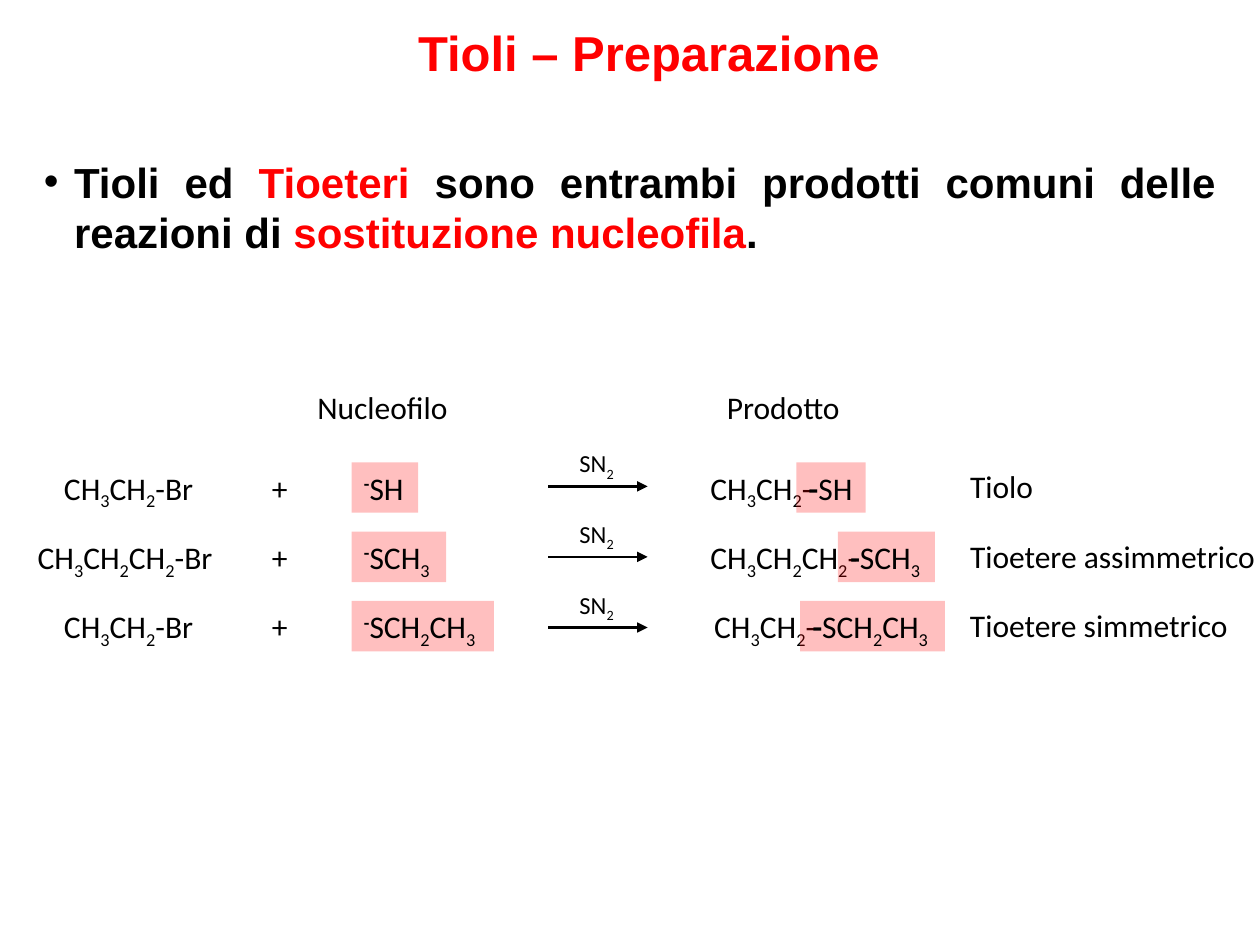
import itertools

import pptx
import pptx.dml.color
import pptx.enum.shapes
import pptx.enum.text
import pptx.oxml
import pptx.oxml.ns
import pptx.util
from pptx.util import Inches

RED = pptx.dml.color.RGBColor(0xFF, 0x00, 0x00)
BLACK = pptx.dml.color.RGBColor(0x00, 0x00, 0x00)
WHITE = pptx.dml.color.RGBColor(0xFF, 0xFF, 0xFF)

ALIGN = pptx.enum.text.PP_ALIGN
SUBSCRIPT, SUPERSCRIPT = -25000, 30000
LINE_HEIGHT = 0.4
ROW_PITCH = 0.55
ARROW_PITCH = 0.56

# Substrate, nucleophile, product stem, stem left, group, group left, group width, class
REACTIONS = [
    ("CH3CH2-Br", 0.41, 1.26, "SH", 0.53,
     "CH3CH2-", 5.54, 1.04, 6.32, 0.55, "Tiolo", 0.71),
    ("CH3CH2CH2-Br", 0.2, 1.68, "SCH3", 0.75,
     "CH3CH2CH2-", 5.54, 1.42, 6.65, 0.77, "Tioetere assimmetrico", 2.49),
    ("CH3CH2-Br", 0.41, 1.26, "SCH2CH3", 1.13,
     "CH3CH2-", 5.57, 1.04, 6.35, 1.15, "Tioetere simmetrico", 2.27),
]


def add_element(parent, tag, **attributes):
    element = pptx.oxml.parse_xml(f"<a:{tag} {pptx.oxml.ns.nsdecls('a')}/>")
    for name, value in attributes.items():
        element.set(name, value)
    parent.append(element)
    return element


def add_run(paragraph, text, size, font="Calibri", color=BLACK, bold=False, baseline=0):
    run = paragraph.add_run()
    run.text = text
    run.font.size = pptx.util.Pt(size)
    run.font.name = font
    run.font.color.rgb = color
    run.font.bold = bold
    if baseline:
        run.font._element.set("baseline", str(baseline))


def add_formula(paragraph, formula, size=18):
    """Write a formula with its digits as subscripts."""
    for is_digit, letters in itertools.groupby(formula, str.isdigit):
        add_run(paragraph, "".join(letters), size, baseline=SUBSCRIPT if is_digit else 0)


def prepare_frame(shape, wrap, align):
    frame = shape.text_frame
    frame.word_wrap = wrap
    frame.auto_size = pptx.enum.text.MSO_AUTO_SIZE.SHAPE_TO_FIT_TEXT
    frame.vertical_anchor = pptx.enum.text.MSO_ANCHOR.TOP
    paragraph = frame.paragraphs[0]
    paragraph.alignment = align
    return paragraph


def add_text_box(slide, left, top, width, height, wrap=False, align=ALIGN.LEFT):
    shape = slide.shapes.add_textbox(Inches(left), Inches(top), Inches(width), Inches(height))
    return prepare_frame(shape, wrap, align)


def add_label(slide, text, left, top, width):
    add_run(add_text_box(slide, left, top, width, LINE_HEIGHT), text, 18)


def add_highlight(slide, formula, left, top, width, baseline=0):
    """Place a pale red box with a bold bond or charge and a formula."""
    shape = slide.shapes.add_shape(
        pptx.enum.shapes.MSO_SHAPE.RECTANGLE,
        Inches(left), Inches(top), Inches(width), Inches(LINE_HEIGHT))
    shape.shadow.inherit = False
    shape.line.fill.background()
    shape.fill.solid()
    shape.fill.fore_color.rgb = RED
    color = shape._element.spPr.find(".//" + pptx.oxml.ns.qn("a:srgbClr"))
    add_element(color, "alpha", val="25000")
    paragraph = prepare_frame(shape, False, ALIGN.LEFT)
    add_run(paragraph, "-", 18, bold=True, baseline=baseline)
    add_formula(paragraph, formula)


def add_arrow(slide, left, right, y):
    arrow = slide.shapes.add_connector(
        pptx.enum.shapes.MSO_CONNECTOR.STRAIGHT,
        Inches(left), Inches(y), Inches(right), Inches(y))
    arrow.line.color.rgb = BLACK
    arrow.line.width = pptx.util.Pt(1.5)
    add_element(arrow.line._get_or_add_ln(), "tailEnd", type="triangle")
    add_element(arrow._element.spPr, "effectLst")


def add_title(slide, left, top, width, height):
    paragraph = add_text_box(slide, left, top, width, height, True, ALIGN.CENTER)
    add_run(paragraph, "Tioli – Preparazione", 28, "Arial", RED, True)


def add_statement(slide, left, top, width, height):
    paragraph = add_text_box(slide, left, top, width, height, True, ALIGN.JUSTIFY)
    properties = paragraph._p.get_or_add_pPr()
    properties.set("marL", str(Inches(0.24)))
    properties.set("indent", str(Inches(-0.24)))
    add_element(properties, "buFont", typeface="Arial")
    add_element(properties, "buChar", char="•")
    for text, color in [
        ("Tioli ed ", BLACK),
        ("Tioeteri ", RED),
        ("sono entrambi prodotti comuni delle reazioni di ", BLACK),
        ("sostituzione nucleofila", RED),
        (".", BLACK),
    ]:
        add_run(paragraph, text, 24, "Arial", color, True)


def add_reactions(slide, top):
    # Column headings
    add_label(slide, "Nucleofilo", 2.42, top, 1.25)
    add_label(slide, "Prodotto", 5.67, top, 1.11)

    for index, reaction in enumerate(REACTIONS):
        (substrate, substrate_left, substrate_width, group, nucleophile_width,
         stem, stem_left, stem_width, group_left, group_width,
         product_class, class_width) = reaction
        row_top = top + 0.64 + index * ROW_PITCH
        arrow_y = top + 0.83 + index * ARROW_PITCH

        # Reagents
        add_formula(add_text_box(slide, substrate_left, row_top, substrate_width,
                                 LINE_HEIGHT), substrate)
        add_label(slide, "+", 2.06, row_top, 0.33)
        add_highlight(slide, group, 2.79, row_top, nucleophile_width, SUPERSCRIPT)

        # Reaction arrow with its mechanism
        add_arrow(slide, 4.35, 5.14, arrow_y)
        add_formula(add_text_box(slide, 4.5, arrow_y - 0.35, 0.48, 0.34), "SN2", 14)

        # Product and its class
        add_formula(add_text_box(slide, stem_left, row_top, stem_width, LINE_HEIGHT), stem)
        add_highlight(slide, group, group_left, row_top, group_width)
        add_label(slide, product_class, 7.6, row_top - 0.01, class_width)


def main():
    presentation = pptx.Presentation()
    presentation.slide_width = Inches(10)
    presentation.slide_height = Inches(7.5)
    slide = presentation.slides.add_slide(presentation.slide_layouts[6])
    slide.background.fill.solid()
    slide.background.fill.fore_color.rgb = WHITE

    add_title(slide, 1.05, 0.13, 8.2, 0.57)
    add_statement(slide, 0.25, 1.19, 9.5, 0.91)
    add_reactions(slide, 3.03)
    presentation.save("out.pptx")


if __name__ == "__main__":
    main()
